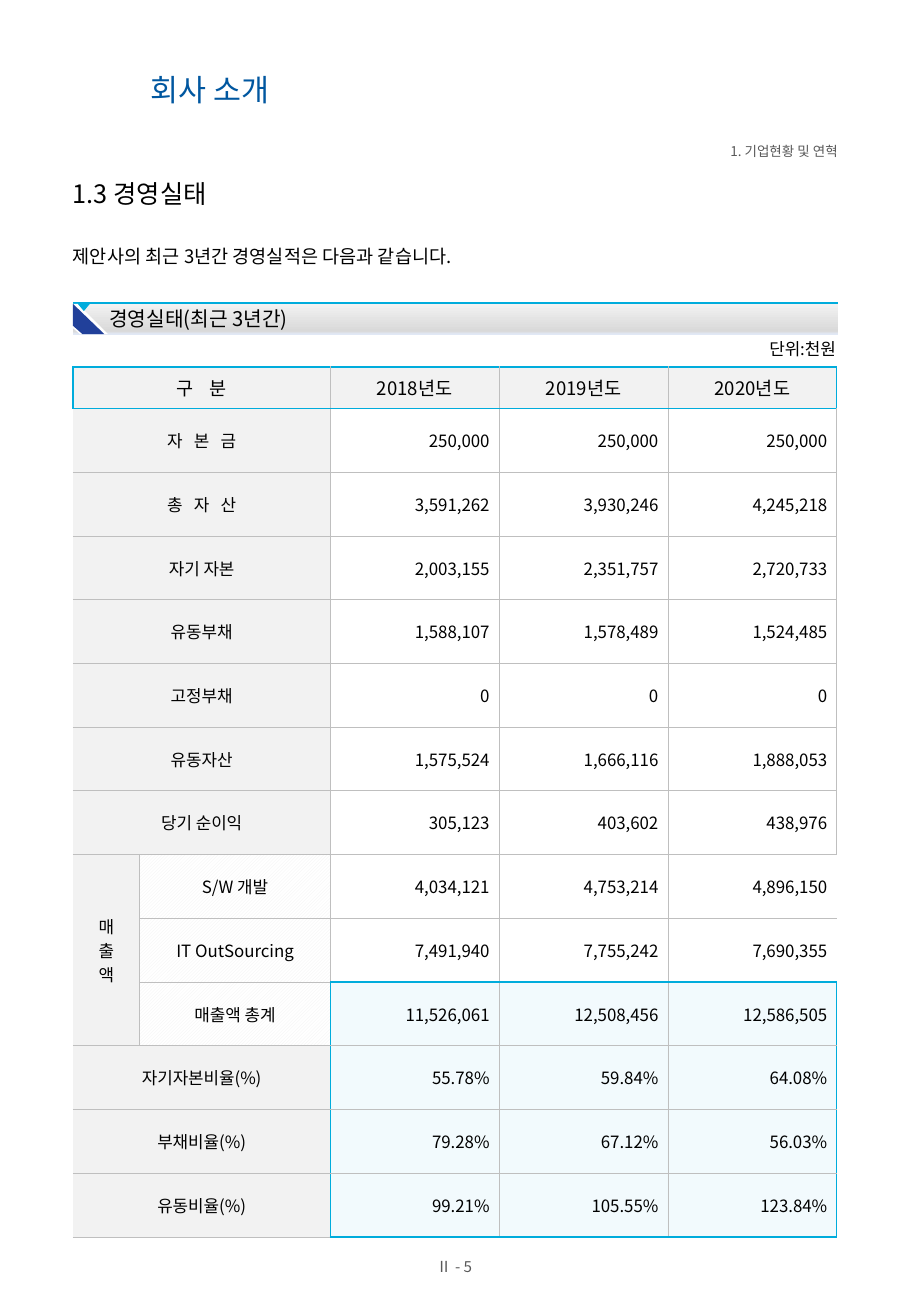
"""Build the company management results page with its three-year table."""
from copy import deepcopy

from lxml.etree import SubElement
from pptx import Presentation
from pptx.dml.color import RGBColor
from pptx.enum.dml import MSO_PATTERN
from pptx.enum.shapes import MSO_SHAPE
from pptx.enum.text import MSO_ANCHOR, MSO_AUTO_SIZE, PP_ALIGN
from pptx.oxml.ns import qn
from pptx.util import Inches, Pt

FONT = "Noto Sans CJK KR"
BLACK, GREY, LIGHT, RULE = "000000", "595959", "F2F2F2", "BFBFBF"
WHITE, CYAN, NAVY, BLUE = "FFFFFF", "00ACDC", "21409A", "0057A0"
NO_GRID_STYLE = "{2D5ABB26-0587-4C30-8999-92F81FD0307C}"

CHAPTER, TITLE = "회사 소개", "1.3 경영실태"
SUMMARY = "제안사의 최근 3년간 경영실적은 다음과 같습니다."
BAND_HEADING, UNIT = "경영실태(최근 3년간)", "단위:천원"
SECTION, PAGE = "1. 기업현황 및 연혁", "Ⅱ - 5"
ROWS = [
    ("구 분", "", "2018년도", "2019년도", "2020년도"),
    ("자 본 금", "", "250,000", "250,000", "250,000"),
    ("총 자 산", "", "3,591,262", "3,930,246", "4,245,218"),
    ("자기 자본", "", "2,003,155", "2,351,757", "2,720,733"),
    ("유동부채", "", "1,588,107", "1,578,489", "1,524,485"),
    ("고정부채", "", "0", "0", "0"),
    ("유동자산", "", "1,575,524", "1,666,116", "1,888,053"),
    ("당기 순이익", "", "305,123", "403,602", "438,976"),
    ("매\n출\n액", "S/W 개발", "4,034,121", "4,753,214", "4,896,150"),
    ("", "IT OutSourcing", "7,491,940", "7,755,242", "7,690,355"),
    ("", "매출액 총계", "11,526,061", "12,508,456", "12,586,505"),
    ("자기자본비율(%)", "", "55.78%", "59.84%", "64.08%"),
    ("부채비율(%)", "", "79.28%", "67.12%", "56.03%"),
    ("유동비율(%)", "", "99.21%", "105.55%", "123.84%"),
]
LETTER_GAPS = {"구 분": 370, "자 본 금": 220, "총 자 산": 220}
SALES_ROW, TOTAL_ROW, FIRST_YEAR = 8, 10, 2
FRAMES = [(0, 0, 1, 5), (TOTAL_ROW, FIRST_YEAR, 14, 5)]

PAGE_WIDTH, PAGE_HEIGHT, MARGIN = 7.5, 10.83, 0.6
CONTENT_WIDTH = PAGE_WIDTH - 2 * MARGIN
BAND_TOP, BAND_HEIGHT = 2.5, 0.25
TABLE_TOP, TABLE_HEIGHT, HEADER_HEIGHT = 3.02, 7.12, 0.3
COLUMN_WIDTHS = (0.55, 1.57, 1.39, 1.39, 1.39)
CORNER_SHAPES = [
    (WHITE, [(4, 0), (0, 0), (0, 20), (6, 25), (29, 25)]),
    (NAVY, [(0, 0), (0, 18), (8, 25), (26, 25)]),
]


def color(value):
    return RGBColor.from_string(value)


def write(frame, text, size, ink=BLACK, align=PP_ALIGN.LEFT, spacing=None):
    for index, line in enumerate(text.split("\n")):
        paragraph = frame.add_paragraph() if index else frame.paragraphs[0]
        paragraph.alignment = align
        paragraph.space_before = Pt(0)
        if spacing:
            paragraph.line_spacing = spacing
        run = paragraph.add_run()
        run.text = line
        run.font.size = Pt(size)
        run.font.bold = False
        run.font.color.rgb = color(ink)
        run.font.name = FONT
        properties = run.font._element
        SubElement(properties, qn("a:ea"), typeface=FONT)
        if line in LETTER_GAPS:
            properties.set("spc", str(LETTER_GAPS[line]))


def set_margins(box, left, top, right, bottom):
    box.margin_left, box.margin_top = Inches(left), Inches(top)
    box.margin_right, box.margin_bottom = Inches(right), Inches(bottom)


def place(shape, area, anchor, margins=(0, 0, 0, 0)):
    shape.left, shape.top, shape.width, shape.height = map(Inches, area)
    frame = shape.text_frame
    frame.word_wrap = True
    frame.auto_size = MSO_AUTO_SIZE.NONE
    frame.vertical_anchor = anchor
    set_margins(frame, *margins)
    return frame


def add_text(slide, area, anchor, margins=(0, 0, 0, 0)):
    return place(slide.shapes.add_textbox(0, 0, 0, 0), area, anchor, margins)


def finish(shape, fill):
    shape.fill.solid()
    shape.fill.fore_color.rgb = color(fill)
    shape.line.fill.background()
    shape.shadow.inherit = False


def add_band(slide):
    band = slide.shapes.add_shape(
        MSO_SHAPE.RECTANGLE, Inches(MARGIN), Inches(BAND_TOP),
        Inches(CONTENT_WIDTH), Inches(BAND_HEIGHT))
    finish(band, LIGHT)
    band.fill.gradient()
    band.fill.gradient_angle = 270
    properties = band._element.spPr
    stop_list = properties.find(".//" + qn("a:gsLst"))
    stop_list.append(deepcopy(stop_list[-1]))
    stops = [(0, LIGHT), (0.9, "D9D9D9"), (1, "E1E8F5")]
    for stop, (position, tint) in zip(band.fill.gradient_stops, stops):
        stop.position = position
        stop.color.rgb = color(tint)
    shadow = SubElement(properties.find(qn("a:effectLst")), qn("a:outerShdw"),
                        blurRad="0", dist=str(Pt(1)), dir="16200000",
                        algn="b", rotWithShape="0")
    SubElement(shadow, qn("a:srgbClr"), val=CYAN)

    for fill, points in CORNER_SHAPES:
        builder = slide.shapes.build_freeform(*points[0], scale=Inches(0.01))
        builder.add_line_segments(points[1:], close=True)
        finish(builder.convert_to_shape(Inches(MARGIN), Inches(BAND_TOP)), fill)
    triangle = slide.shapes.add_shape(
        MSO_SHAPE.ISOSCELES_TRIANGLE, Inches(MARGIN + 0.04), Inches(BAND_TOP),
        Inches(0.1), Inches(0.06))
    triangle.rotation = 180
    finish(triangle, CYAN)
    frame = add_text(slide, (MARGIN + 0.24, BAND_TOP + 0.02, 5.56, 0.22),
                     MSO_ANCHOR.MIDDLE, (0.06, 0, 0.06, 0.02))
    write(frame, BAND_HEADING, 12)


def on_frame(side, row, column, edge):
    for top, left, bottom, right in FRAMES:
        if side in "LR" and edge in (left, right) and top <= row < bottom:
            return True
        if side in "TB" and edge in (top, bottom) and left <= column < right:
            return True
    return False


def draw_borders(cell, row, column):
    right = column + (cell.span_width if cell.is_merge_origin else 1)
    bottom = row + (cell.span_height if cell.is_merge_origin else 1)
    for side, edge in (("L", column), ("R", right), ("T", row), ("B", bottom)):
        framed = on_frame(side, row, column, edge)
        if side in "LR" and edge in (0, len(COLUMN_WIDTHS)) and not framed:
            continue
        line = SubElement(cell._tc.get_or_add_tcPr(), qn("a:ln" + side),
                          w=str(Pt(1 if framed else 0.5)))
        fill = SubElement(line, qn("a:solidFill"))
        SubElement(fill, qn("a:srgbClr"), val=CYAN if framed else RULE)


def fill_cell(cell, row, column):
    if column == 1:
        cell.fill.patterned()
        cell.fill.pattern = MSO_PATTERN.DARK_UPWARD_DIAGONAL
        cell.fill.fore_color.rgb = color(LIGHT)
        cell.fill.back_color.rgb = color(WHITE)
        return
    total = row >= TOTAL_ROW and column >= FIRST_YEAR
    plain = LIGHT if row == 0 or column == 0 else WHITE
    cell.fill.solid()
    cell.fill.fore_color.rgb = color(CYAN if total else plain)
    if total:
        tint = cell._tc.tcPr.find(qn("a:solidFill"))[0]
        SubElement(tint, qn("a:alpha"), val="5000")


def add_results_table(slide):
    table = slide.shapes.add_table(
        len(ROWS), len(COLUMN_WIDTHS), Inches(MARGIN), Inches(TABLE_TOP),
        Inches(CONTENT_WIDTH), Inches(TABLE_HEIGHT)).table
    table.first_row = table.horz_banding = False
    table._tbl.tblPr.find(qn("a:tableStyleId")).text = NO_GRID_STYLE
    for column, width in zip(table.columns, COLUMN_WIDTHS):
        column.width = Inches(width)
    row_height = (TABLE_HEIGHT - HEADER_HEIGHT) / (len(ROWS) - 1)
    for index, values in enumerate(ROWS):
        table.rows[index].height = Inches(row_height if index else HEADER_HEIGHT)
        if values[0] and not values[1]:
            table.cell(index, 0).merge(table.cell(index, 1))
    table.cell(SALES_ROW, 0).merge(table.cell(TOTAL_ROW, 0))
    for row, values in enumerate(ROWS):
        for column, value in enumerate(values):
            cell = table.cell(row, column)
            if cell.is_spanned:
                continue
            cell.vertical_anchor = MSO_ANCHOR.MIDDLE
            set_margins(cell, 0.08, 0.06, 0.08, 0.06)
            number = row and column >= FIRST_YEAR
            write(cell.text_frame, value, 10 if row else 11,
                  align=PP_ALIGN.RIGHT if number else PP_ALIGN.CENTER)
            draw_borders(cell, row, column)
            fill_cell(cell, row, column)


def main():
    presentation = Presentation()
    presentation.slide_width = Inches(PAGE_WIDTH)
    presentation.slide_height = Inches(PAGE_HEIGHT)
    slide = presentation.slides.add_slide(presentation.slide_layouts[1])
    top, middle = MSO_ANCHOR.TOP, MSO_ANCHOR.MIDDLE

    write(add_text(slide, (3.54, 10.35, 0.4, 0.15), middle), PAGE, 9, GREY,
          PP_ALIGN.CENTER)
    write(add_text(slide, (1.24, 0.53, 3.05, 0.34), middle), CHAPTER, 18, BLUE,
          spacing=1.25)
    title, body = slide.placeholders
    write(place(title, (MARGIN, 1.39, CONTENT_WIDTH, 0.33), MSO_ANCHOR.BOTTOM),
          TITLE, 15, spacing=1.1)
    summary = place(body, (MARGIN, 1.98, CONTENT_WIDTH, 0.32), top)
    bullet = summary.paragraphs[0]._p.get_or_add_pPr()
    bullet.set("marL", "0")
    bullet.set("indent", "0")
    SubElement(bullet, qn("a:buNone"))
    write(summary, SUMMARY, 11, align=PP_ALIGN.JUSTIFY, spacing=1.2)
    add_band(slide)
    write(add_text(slide, (5.86, 2.74, 1.12, 0.27), top, (0.1, 0.05, 0.1, 0.05)),
          UNIT, 10, align=PP_ALIGN.RIGHT)
    write(add_text(slide, (6, 1.17, 0.9, 0.14), top), SECTION, 8, GREY,
          PP_ALIGN.RIGHT, Pt(10))
    add_results_table(slide)
    presentation.save("out.pptx")


if __name__ == "__main__":
    main()
